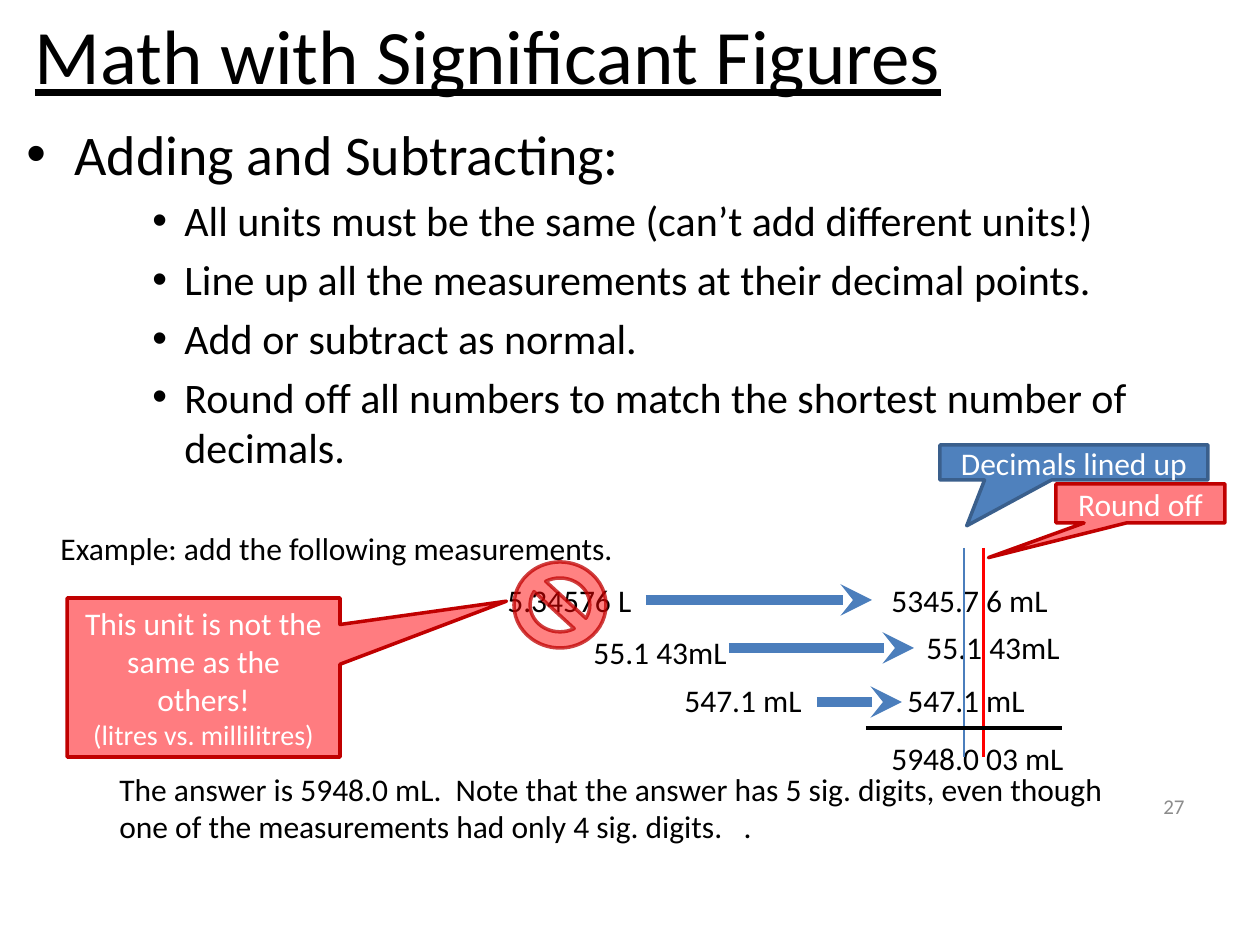
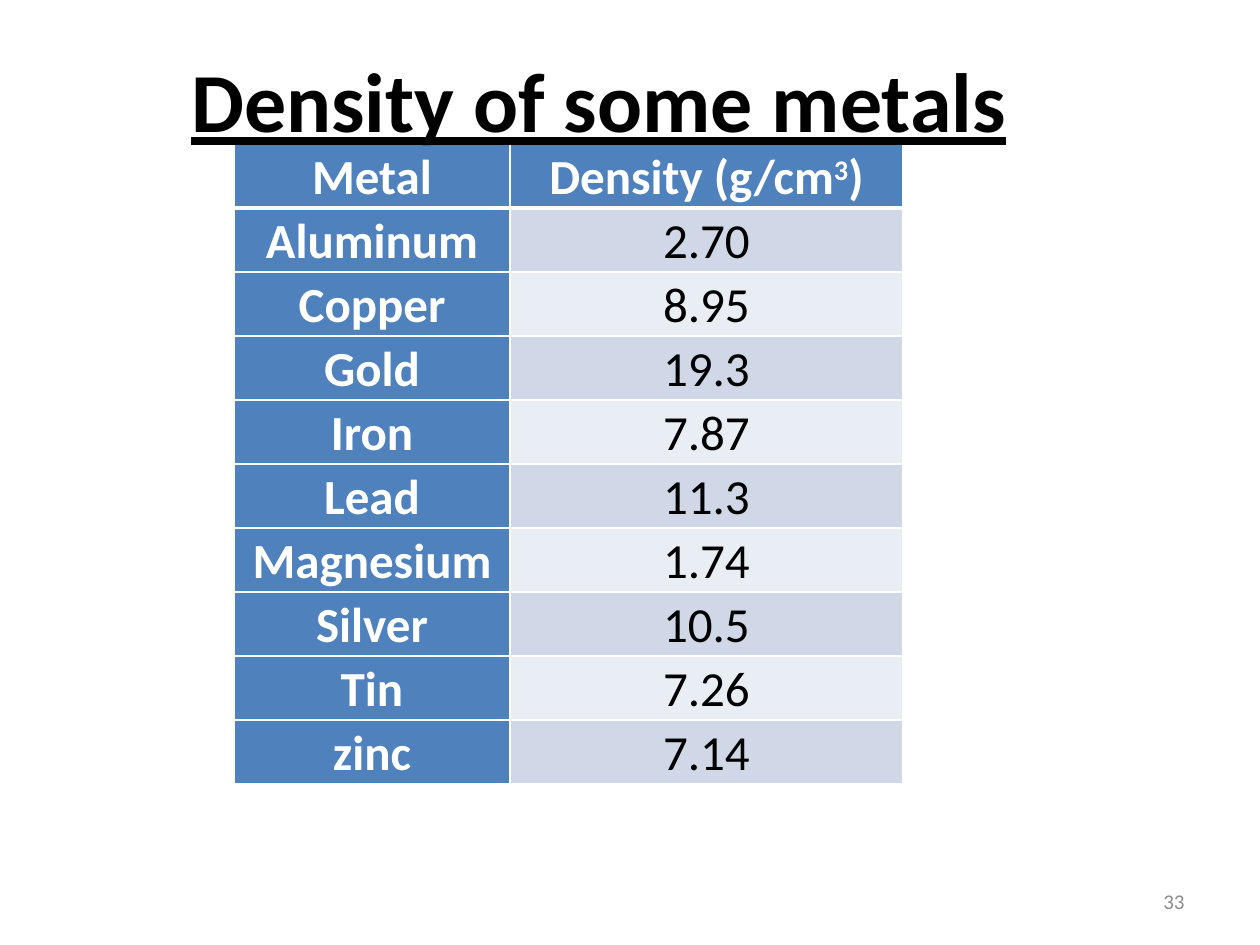
from pptx import Presentation
from pptx import util as u
from pptx.dml.color import RGBColor
from pptx.enum import shapes, text
from pptx.oxml.ns import qn
from lxml import etree

PX = 7257  # EMU in one pixel
FONT = "Calibri"
BLACK, WHITE, GREY = "000000", "FFFFFF", "8C8C8C"
BLUE, EDGE, ARROW = "4F81BD", "3A5F8C", "4B7EBC"
PINK, RED, DARK = "FF7C80", "FF0000", "C00000"
LEFT, MID, RIGHT = text.PP_ALIGN.LEFT, text.PP_ALIGN.CENTER, text.PP_ALIGN.RIGHT
tone = RGBColor.from_string


def style(para, size, ink=BLACK, align=LEFT, bold=False, under=False):
    para.alignment = align
    for run in para.runs:
        font = run.font
        font.name, font.size = FONT, u.Pt(size)
        font.bold, font.underline = bold, under
        font.color.rgb = tone(ink)


def label(slide, words, x, y, w, h, size=18, wrap=False, **look):
    box = slide.shapes.add_textbox(x * PX, y * PX, w * PX, h * PX)
    frame = box.text_frame
    frame.word_wrap = wrap
    frame.vertical_anchor = text.MSO_ANCHOR.MIDDLE
    frame.text = words
    for para in frame.paragraphs:
        style(para, size, **look)
    return frame


deck = Presentation()
deck.slide_width, deck.slide_height = 1260 * PX, 945 * PX
math, metal = [deck.slides.add_slide(deck.slide_layouts[6]) for _ in range(2)]

# Titles and page numbers
label(math, "Math with Significant Figures", 0, 0, 976, 108, 44, align=MID, under=True)
for slide, page, y in [(math, "27", 781), (metal, "33", 876)]:
    label(slide, page, 903, y, 294, 50, 12, wrap=True, ink=GREY, align=RIGHT)

# Rules for adding and subtracting
rules = [
    "Adding and Subtracting:",
    "All units must be the same (can’t add different units!)",
    "Line up all the measurements at their decimal points.",
    "Add or subtract as normal.",
    "Round off all numbers to match the shortest number of decimals.",
]
body = label(math, "\n".join(rules), 14, 113, 1246, 404, 24, wrap=True)
body.vertical_anchor = text.MSO_ANCHOR.TOP
for i, para in enumerate(body.paragraphs):
    left, hang, gap = (158, 32, 4.8) if i else (48, 48, 6.4)
    para.space_before = u.Pt(gap)
    prop = para._p.get_or_add_pPr()
    prop.set("marL", str(left * PX))
    prop.set("indent", str(-hang * PX))
    etree.SubElement(prop, qn("a:buFont"), typeface="Arial")
    etree.SubElement(prop, qn("a:buChar"), char="•")
style(body.paragraphs[0], 32)

# Measurements before and after conversion
for words, x, y, w in [
    ("Example: add the following measurements.", 48, 523, 585),
    ("5.34576 L", 495, 575, 151),
    ("55.1 43mL", 581, 627, 160),
    (" 547.1 mL", 665, 675, 151),
    (" 5345.7 6 mL", 872, 575, 190),
    ("55.1 43mL", 914, 622, 160),
    (" 547.1 mL", 888, 675, 151),
    ("5948.0 03 mL", 879, 733, 200),
]:
    label(math, words, x, y, w, 50)
label(math, "The answer is 5948.0 mL.  Note that the answer has 5 sig. digits, "
      "even though one of the measurements had only 4 sig. digits.   .",
      107, 763, 1047, 89, wrap=True)

# Guides, sum line and arrows
for x1, y1, x2, y2, ink, wide, head in [
    (964, 548, 964, 757, ARROW, 1.5, False),
    (984, 548, 984, 757, RED, 1.75, False),
    (866, 728, 1062, 728, BLACK, 2, False),
    (646, 600, 872, 600, ARROW, 6, True),
    (729, 648, 914, 648, ARROW, 6, True),
    (817, 702, 902, 702, ARROW, 6, True),
]:
    line = math.shapes.add_connector(
        shapes.MSO_CONNECTOR.STRAIGHT, x1 * PX, y1 * PX, x2 * PX, y2 * PX)
    line.line.color.rgb = tone(ink)
    line.line.width = u.Pt(wide)
    if head:
        etree.SubElement(line.line._get_or_add_ln(), qn("a:tailEnd"), type="stealth")
    etree.SubElement(line._element.spPr, qn("a:effectLst"))

# Callouts and the forbidden sign
CALL, BAN = shapes.MSO_SHAPE.RECTANGULAR_CALLOUT, shapes.MSO_SHAPE.NO_SYMBOL
for kind, words, x, y, w, h, fill, edge, tip in [
    (BAN, "", 514, 562, 92, 86, RED, DARK, ()),
    (CALL, "Decimals lined up", 940, 445, 268, 35, BLUE, EDGE, (-0.4, 1.81)),
    (CALL, "Round off", 1056, 484, 169, 39, PINK, DARK, (-0.9, 1.39)),
    (CALL, "This unit is not the same as the others!\n(litres vs. millilitres)",
     67, 598, 273, 159, PINK, DARK, (1.11, -0.48)),
]:
    mark = math.shapes.add_shape(kind, x * PX, y * PX, w * PX, h * PX)
    mark.shadow.inherit = False
    mark.fill.solid()
    mark.fill.fore_color.rgb = tone(fill)
    mark.line.color.rgb = tone(edge)
    mark.line.width = u.Pt(2)
    for i, val in enumerate(tip):
        mark.adjustments[i] = val
    if kind == BAN:
        inks = mark._element.spPr.iter(qn("a:srgbClr"))
        for ink, alpha in zip(inks, ("49000", "75000")):
            etree.SubElement(ink, qn("a:alpha"), val=alpha)
        continue
    mark.text_frame.text = words
    mark.text_frame.vertical_anchor = text.MSO_ANCHOR.MIDDLE
    for para, size in zip(mark.text_frame.paragraphs, (18, 16)):
        style(para, size, WHITE, MID)

# Density table
rows = [
    ("Metal", "Density (g/cm"), ("Aluminum", "2.70"), ("Copper", "8.95"),
    ("Gold", "19.3"), ("Iron", "7.87"), ("Lead", "11.3"), ("Magnesium", "1.74"),
    ("Silver", "10.5"), ("Tin", "7.26"), ("zinc", "7.14"),
]
high = 64
grid = metal.shapes.add_table(
    len(rows), 2, 234 * PX, 144 * PX, 669 * PX, len(rows) * high * PX).table
grid.first_col = True
for col, wide in zip(grid.columns, (276, 393)):
    col.width = wide * PX
for r, row in enumerate(rows):
    for c, words in enumerate(row):
        cell = grid.cell(r, c)
        cell.margin_left = cell.margin_right = 9 * PX
        cell.margin_top = cell.margin_bottom = 0
        lead = r == 0 or c == 0
        prop = cell._tc.get_or_add_tcPr()
        for side in "LRTB":
            thick = (side == "B" and r == 0) or (side == "T" and r == 1)
            rim = etree.SubElement(prop, qn("a:ln" + side), w=str(u.Pt(3 if thick else 1)))
            paint = etree.SubElement(rim, qn("a:solidFill"))
            etree.SubElement(paint, qn("a:srgbClr"), val=WHITE)
        cell.fill.solid()
        cell.fill.fore_color.rgb = tone(BLUE if lead else "D0D8E8" if r % 2 else "E9EDF4")
        cell.text_frame.text = words
        para = cell.text_frame.paragraphs[0]
        para.line_spacing = 1.07
        if (r, c) == (0, 1):
            power = para.add_run()
            power.text = "3"
            power._r.get_or_add_rPr().set("baseline", "30000")
            para.add_run().text = ")"
        style(para, 28, WHITE if lead else BLACK, MID, bold=lead)

# Table title, wide enough for one line
label(metal, "Density of some metals", 179, 42, 1000, 114, 48,
      wrap=True, bold=True, under=True)

deck.save("out.pptx")
